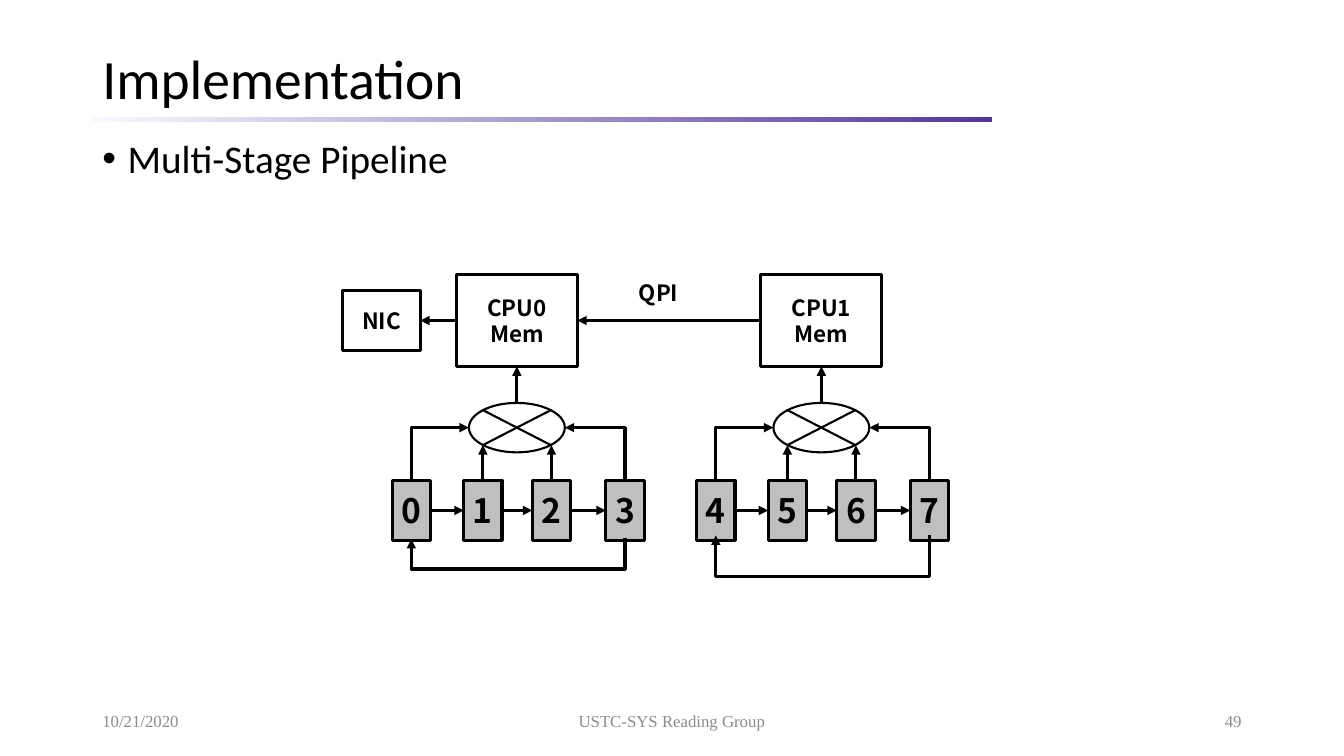
from dataclasses import dataclass

from lxml import etree
from pptx import Presentation
from pptx import util as u
from pptx.dml.color import RGBColor
from pptx.enum import shapes, text
from pptx.oxml import ns

Pt = u.Pt
COLORS = {"ink": "000000", "paper": "FFFFFF", "core": "BFBFBF", "footer": "8C8C8C",
          "bar_start": "F7FAFD", "bar_end": "543795"}
TOP, LEFT, BOTTOM, RIGHT = range(4)
SOCKET_STEP = 217.5
CORE_LEFTS = (280.1, 331.2, 380.2, 432.7)
CORE_TOP, CORE_WIDTH, CORE_HEIGHT = 343.2, 27.4, 42.8
JUNCTION_ENTRY = 318


@dataclass(frozen=True)
class Box:
    label: str
    left: float
    top: float
    width: float
    height: float
    size: float = 16
    fill: str = "paper"


@dataclass(frozen=True)
class Footer:
    label: str
    left: float
    width: float
    align: text.PP_ALIGN


@dataclass(frozen=True)
class Socket:
    memory: str
    first_core: int
    shift: float
    loop_top: float
    loop_bottom: float


FOOTERS = (
    Footer("10/21/2020", 66, 216, text.PP_ALIGN.LEFT),
    Footer("USTC-SYS Reading Group", 318, 324, text.PP_ALIGN.CENTER),
    Footer("49", 678, 216, text.PP_ALIGN.RIGHT),
)
SOCKETS = (
    Socket("CPU0\nMem", 0, 0, 384.5, 406),
    Socket("CPU1\nMem", 4, SOCKET_STEP, 382, 411),
)


def rgb(name: str) -> RGBColor:
    return RGBColor.from_string(COLORS[name])


def style(paragraph, font: str, size: float, color: str = "ink", bold: bool = False) -> None:
    paragraph.font.name = font
    paragraph.font.size = Pt(size)
    paragraph.font.bold = bold
    paragraph.font.color.rgb = rgb(color)


def place(shape, left: float, top: float, width: float, height: float) -> None:
    shape.left, shape.top, shape.width, shape.height = map(Pt, (left, top, width, height))


def add_solid(slide, preset, box: Box, weight: float = 2.25):
    solid = slide.shapes.add_shape(
        preset, Pt(box.left), Pt(box.top), Pt(box.width), Pt(box.height))
    solid.shadow.inherit = False
    solid.fill.solid()
    solid.fill.fore_color.rgb = rgb(box.fill)
    solid.line.color.rgb = rgb("ink")
    solid.line.width = Pt(weight)
    return solid


def add_box(slide, box: Box):
    solid = add_solid(slide, shapes.MSO_SHAPE.RECTANGLE, box)
    frame = solid.text_frame
    frame.margin_left = frame.margin_right = frame.margin_top = frame.margin_bottom = 0
    frame.vertical_anchor = text.MSO_ANCHOR.MIDDLE
    frame.text = box.label
    for paragraph in frame.paragraphs:
        paragraph.alignment = text.PP_ALIGN.CENTER
        paragraph.line_spacing = Pt(box.size * 1.2)
        style(paragraph, "Noto Sans CJK SC", box.size, bold=True)
    return solid


def add_arrow(slide, start: tuple[float, float], finish: tuple[float, float],
              kind=shapes.MSO_CONNECTOR.STRAIGHT, marker: str = "tailEnd"):
    arrow = slide.shapes.add_connector(kind, *map(Pt, (*start, *finish)))
    arrow.line.color.rgb = rgb("ink")
    arrow.line.width = Pt(2.25)
    properties = arrow.element.spPr
    etree.SubElement(properties.find(ns.qn("a:ln")), ns.qn(f"a:{marker}"), type="triangle")
    etree.SubElement(properties, ns.qn("a:effectLst"))
    return arrow


def join(slide, source, source_side: int, target, target_side: int) -> None:
    arrow = add_arrow(slide, (0, 0), (0, 0))
    arrow.begin_connect(source, source_side)
    arrow.end_connect(target, target_side)


def add_corner(slide, core: tuple[float, float], junction: tuple[float, float]) -> None:
    corner = add_arrow(slide, junction, core, shapes.MSO_CONNECTOR.ELBOW, "headEnd")
    corner.element.spPr.find(ns.qn("a:prstGeom")).set("prst", "bentConnector2")


def add_loop(slide, start_x: float, end_x: float, top: float, bottom: float) -> None:
    rise, span = 0.5, start_x - end_x
    loop = add_arrow(slide, (0, 0), (1, 1), shapes.MSO_CONNECTOR.ELBOW)
    place(loop, (start_x + end_x - rise) / 2, top + (rise - span) / 2, rise, span)
    properties = loop.element.spPr
    properties.find(ns.qn("a:xfrm")).set("rot", "5400000")
    geometry = properties.find(ns.qn("a:prstGeom"))
    guides = geometry.find(ns.qn("a:avLst"))
    if guides is None:
        guides = etree.SubElement(geometry, ns.qn("a:avLst"))
    bend = round((bottom - top) / rise * 100000)
    etree.SubElement(guides, ns.qn("a:gd"), name="adj1", fmla=f"val {bend}")


def add_socket(slide, socket: Socket):
    shift = socket.shift
    memory = add_box(slide, Box(socket.memory, 326 + shift, 196.2, 86.4, 65.5))
    oval = Box("", 334.95 + shift, 287.8, 68.5, 35.3)
    junction = add_solid(slide, shapes.MSO_SHAPE.FLOWCHART_SUMMING_JUNCTION, oval, 1.5)
    cores = [
        add_box(slide, Box(str(socket.first_core + i), left + shift, CORE_TOP,
                           CORE_WIDTH, CORE_HEIGHT, 24, "core"))
        for i, left in enumerate(CORE_LEFTS)
    ]
    for core, following in zip(cores, cores[1:]):
        join(slide, core, RIGHT, following, LEFT)
    first, second, third, last = (left + shift + CORE_WIDTH / 2 for left in CORE_LEFTS)
    add_loop(slide, last, first, socket.loop_top, socket.loop_bottom)
    middle = oval.top + oval.height / 2
    add_corner(slide, (first, CORE_TOP), (oval.left, middle))
    add_corner(slide, (last, CORE_TOP), (oval.left + oval.width, middle))
    for core, x in zip(cores[1:3], (second, third)):
        add_arrow(slide, (x, CORE_TOP), (x, JUNCTION_ENTRY)).begin_connect(core, TOP)
    join(slide, junction, TOP, memory, BOTTOM)
    return memory


def add_heading(slide) -> None:
    bar = slide.shapes.add_shape(shapes.MSO_SHAPE.RECTANGLE, Pt(66), Pt(83.5), Pt(642.5), Pt(4))
    bar.shadow.inherit = False
    bar.line.fill.background()
    bar.fill.gradient()
    bar.fill.gradient_angle = 0
    for stop, position, name in zip(bar.fill.gradient_stops, (0, 1), ("bar_start", "bar_end")):
        stop.position = position
        stop.color.rgb = rgb(name)

    title, topics = slide.placeholders
    place(title, 66, 31, 828, 54)
    place(topics, 66, 95.8, 828, 391)
    title.text_frame.text = "Implementation"
    topics.text_frame.text = "Multi-Stage Pipeline"
    title.text_frame.vertical_anchor = text.MSO_ANCHOR.MIDDLE
    topic = topics.text_frame.paragraphs[0]
    bullet = topic._p.get_or_add_pPr()
    bullet.set("marL", str(Pt(18)))
    bullet.set("indent", str(-Pt(18)))
    etree.SubElement(bullet, ns.qn("a:buFont"), typeface="Arial")
    etree.SubElement(bullet, ns.qn("a:buChar"), char="•")
    for holder, size in ((title, 39.6), (topics, 28)):
        holder.text_frame.auto_size = text.MSO_AUTO_SIZE.NONE
        paragraph = holder.text_frame.paragraphs[0]
        paragraph.alignment = text.PP_ALIGN.LEFT
        paragraph.line_spacing = 0.9
        paragraph.space_before = Pt(0)
        style(paragraph, "Calibri", size)


def add_footer(slide, footer: Footer) -> None:
    note = slide.shapes.add_textbox(Pt(footer.left), Pt(500.4), Pt(footer.width), Pt(28.8))
    note.text_frame.word_wrap = True
    note.text_frame.vertical_anchor = text.MSO_ANCHOR.MIDDLE
    note.text_frame.text = footer.label
    note.text_frame.paragraphs[0].alignment = footer.align
    style(note.text_frame.paragraphs[0], "Times New Roman", 12, "footer")


def main() -> None:
    deck = Presentation()
    deck.slide_width, deck.slide_height = Pt(960), Pt(540)
    slide = deck.slides.add_slide(deck.slide_layouts[1])
    add_heading(slide)
    for footer in FOOTERS:
        add_footer(slide, footer)
    nic = add_box(slide, Box("NIC", 244.8, 207.35, 55.4, 43.2))
    cpu0, cpu1 = [add_socket(slide, socket) for socket in SOCKETS]
    join(slide, cpu0, LEFT, nic, RIGHT)
    join(slide, cpu1, LEFT, cpu0, RIGHT)
    qpi = slide.shapes.add_textbox(Pt(449.3), Pt(195.8), Pt(52.6), Pt(26.6))
    qpi.text_frame.word_wrap = True
    qpi.text_frame.text = "QPI"
    qpi.text_frame.paragraphs[0].line_spacing = Pt(19.2)
    style(qpi.text_frame.paragraphs[0], "Noto Sans CJK SC", 16, bold=True)
    deck.save("out.pptx")


if __name__ == "__main__":
    main()
